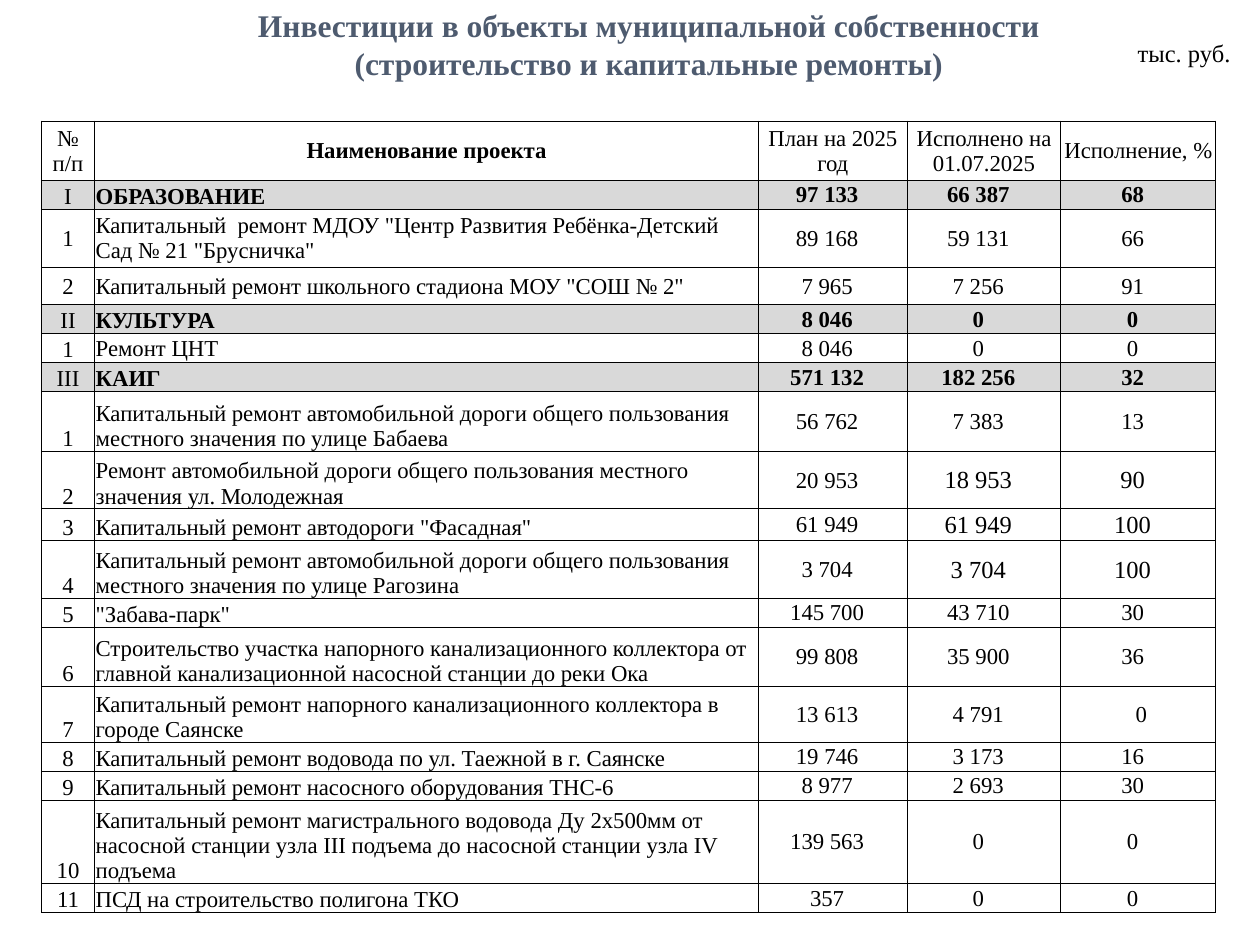
from dataclasses import dataclass

from lxml.etree import SubElement
from pptx import Presentation
from pptx.dml.color import RGBColor
from pptx.enum.text import MSO_ANCHOR as Anchor, PP_ALIGN as Align
from pptx.oxml.ns import qn
from pptx.util import Inches, Pt


@dataclass(frozen=True)
class Theme:
    font: str = "Times New Roman"
    title_color: str = "4E5B6F"
    text_color: str = "000000"
    border_color: str = "000000"
    section_fill: str = "D9D9D9"
    row_fill: str = "FFFFFF"
    title_size: float = 18
    unit_size: float = 14
    table_size: float = 13
    large_size: float = 14
    border_width: float = 0.5


THEME = Theme()
TITLE = ["Инвестиции в объекты муниципальной собственности",
         "(строительство и капитальные ремонты)"]
UNIT = "тыс. руб."
HEADERS = ["№ п/п", "Наименование проекта", "План на 2025 год",
           "Исполнено на 01.07.2025", "Исполнение, %"]
HEADER_HEIGHT = 0.47
COLUMN_WIDTHS = [0.42, 5.27, 1.18, 1.22, 1.23]

# Row height, then number, name, plan, executed, percent
SECTIONS = [
    {
        "heading": (0.23, "I", "ОБРАЗОВАНИЕ", "97 133", "66 387", "68"),
        "number_anchor": Anchor.MIDDLE,
        "name_anchor": Anchor.MIDDLE,
        "projects": [
            (0.46, "1", 'Капитальный  ремонт МДОУ "Центр Развития Ребёнка-Детский '
             'Сад № 21 "Брусничка"', "89 168", "59 131", "66"),
            (0.30, "2", 'Капитальный ремонт школьного стадиона МОУ "СОШ № 2"',
             "7 965", "7 256", "91"),
        ],
    },
    {
        "heading": (0.23, "II", "КУЛЬТУРА", "8 046", "0", "0"),
        "number_anchor": Anchor.BOTTOM,
        "name_anchor": Anchor.MIDDLE,
        "projects": [(0.23, "1", "Ремонт ЦНТ", "8 046", "0", "0")],
    },
    {
        "heading": (0.23, "III", "КАИГ", "571 132", "182 256", "32"),
        "number_anchor": Anchor.BOTTOM,
        "name_anchor": Anchor.BOTTOM,
        "projects": [
            (0.47, "1", "Капитальный ремонт автомобильной дороги общего пользования "
             "местного значения по улице Бабаева", "56 762", "7 383", "13"),
            (0.46, "2", "Ремонт автомобильной дороги общего пользования местного "
             "значения ул. Молодежная", "20 953", "18 953", "90"),
            (0.25, "3", 'Капитальный ремонт автодороги "Фасадная"',
             "61 949", "61 949", "100"),
            (0.46, "4", "Капитальный ремонт автомобильной дороги общего пользования "
             "местного значения по улице Рагозина", "3 704", "3 704", "100"),
            (0.22, "5", '"Забава-парк"', "145 700", "43 710", "30"),
            (0.47, "6", "Строительство участка напорного канализационного коллектора "
             "от главной канализационной насосной станции до реки Ока",
             "99 808", "35 900", "36"),
            (0.44, "7", "Капитальный ремонт напорного канализационного коллектора в "
             "городе Саянске", "13 613", "4 791", "0"),
            (0.23, "8", "Капитальный ремонт водовода по ул. Таежной в г. Саянске",
             "19 746", "3 173", "16"),
            (0.23, "9", "Капитальный ремонт насосного оборудования ТНС-6",
             "8 977", "2 693", "30"),
            (0.66, "10", "Капитальный ремонт магистрального водовода Ду 2х500мм от "
             "насосной станции узла III подъема до насосной станции узла IV подъема",
             "139 563", "0", "0"),
            (0.23, "11", "ПСД на строительство полигона ТКО", "357", "0", "0"),
        ],
        "large_projects": ("2", "3", "4"),
        "unshifted_percent": "7",
    },
]
CELL_INSET = 0.01
NUMBER_INSET = 0.1    # right inset that moves figures slightly left of centre
UNSHIFTED_INSET = 0.06


def style_paragraph(paragraph, text, size, color, bold=False, align=Align.LEFT):
    paragraph.text = text
    paragraph.alignment = align
    font = paragraph.font
    font.name, font.size, font.bold = THEME.font, Pt(size), bold
    font.color.rgb = RGBColor.from_string(color)


def add_text(slide, box, lines, size, color, bold=False, align=Align.LEFT):
    frame = slide.shapes.add_textbox(*map(Inches, box)).text_frame
    frame.word_wrap = True
    for index, line in enumerate(lines):
        paragraph = frame.add_paragraph() if index else frame.paragraphs[0]
        style_paragraph(paragraph, line, size, color, bold, align)


def add_borders(cell):
    """Outline a cell; border elements must come before its fill."""
    properties = cell._tc.get_or_add_tcPr()
    for position, side in enumerate(("a:lnL", "a:lnR", "a:lnT", "a:lnB")):
        line = SubElement(properties, qn(side), w=str(Pt(THEME.border_width)))
        fill = SubElement(line, qn("a:solidFill"))
        SubElement(fill, qn("a:srgbClr"), val=THEME.border_color)
        properties.insert(position, line)


def fill_cell(cell, text, fill, anchor=Anchor.MIDDLE, align=Align.CENTER,
              bold=False, size=THEME.table_size, left=CELL_INSET, right=CELL_INSET):
    style_paragraph(cell.text_frame.paragraphs[0], text, size,
                    THEME.text_color, bold, align)
    cell.vertical_anchor = anchor
    cell.margin_left, cell.margin_right = Inches(left), Inches(right)
    cell.margin_top, cell.margin_bottom = Inches(CELL_INSET), 0
    cell.fill.solid()
    cell.fill.fore_color.rgb = RGBColor.from_string(fill)
    add_borders(cell)


def fill_row(cells, values, fill, number_anchor, name_anchor, bold=False,
             large=False, unshifted=False):
    number, name, *figures = values
    fill_cell(cells[0], number, fill, number_anchor)
    fill_cell(cells[1], name, fill, name_anchor, Align.LEFT, bold)
    for index, figure in enumerate(figures):
        size = THEME.large_size if large and index > 0 else THEME.table_size
        insets = {"right": NUMBER_INSET}
        if unshifted and index == 2:
            # This one figure stands right of centre
            insets = {"left": UNSHIFTED_INSET}
        fill_cell(cells[index + 2], figure, fill, bold=bold, size=size, **insets)


def add_projects_table(slide):
    heights = [HEADER_HEIGHT]
    for section in SECTIONS:
        heights += [row[0] for row in (section["heading"], *section["projects"])]
    table = slide.shapes.add_table(
        len(heights), len(HEADERS), Inches(0.33), Inches(0.96),
        Inches(sum(COLUMN_WIDTHS)), Inches(sum(heights))).table
    table.first_row = table.horz_banding = False
    for column, width in zip(table.columns, COLUMN_WIDTHS):
        column.width = Inches(width)
    for row, height in zip(table.rows, heights):
        row.height = Inches(height)

    rows = iter(table.rows)
    for index, (cell, header) in enumerate(zip(next(rows).cells, HEADERS)):
        fill_cell(cell, header, THEME.row_fill, bold=index == 1)
    for section in SECTIONS:
        fill_row(list(next(rows).cells), section["heading"][1:], THEME.section_fill,
                 Anchor.BOTTOM, Anchor.BOTTOM, bold=True)
        for _, *values in section["projects"]:
            fill_row(list(next(rows).cells), values, THEME.row_fill,
                     section["number_anchor"], section["name_anchor"],
                     large=values[0] in section.get("large_projects", ()),
                     unshifted=values[0] == section.get("unshifted_percent"))


def main():
    presentation = Presentation()
    presentation.slide_width, presentation.slide_height = Inches(10), Inches(7.5)
    slide = presentation.slides.add_slide(presentation.slide_layouts[6])
    add_text(slide, (0.33, 0, 9.64, 0.71), TITLE, THEME.title_size,
             THEME.title_color, bold=True, align=Align.CENTER)
    add_text(slide, (8.93, 0.25, 0.95, 0.34), [UNIT], THEME.unit_size,
             THEME.text_color)
    add_projects_table(slide)
    presentation.save("out.pptx")


if __name__ == "__main__":
    main()
